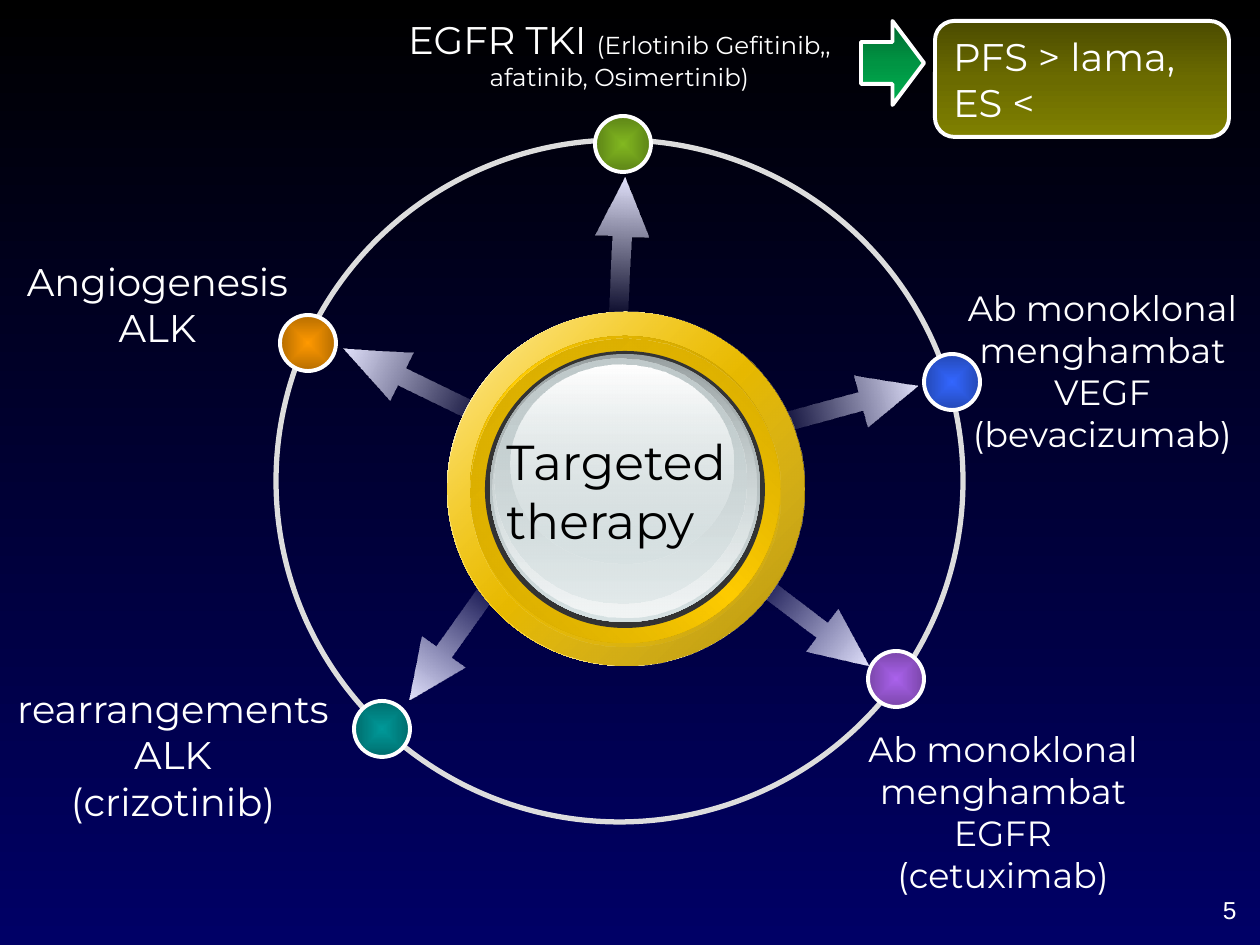
from lxml import etree
from pptx import Presentation
from pptx import util as u
from pptx.dml.color import RGBColor
from pptx.enum import shapes, text
from pptx.oxml.ns import qn

SCALE = u.Inches(1) / 126
WIDTH, HEIGHT = 1260, 945
NODE_SIZE = 56

BLACK = RGBColor(0x00, 0x00, 0x00)
WHITE = RGBColor(0xFF, 0xFF, 0xFF)
NAVY = RGBColor(0x00, 0x00, 0x66)
RING_GRAY = RGBColor(0xDD, 0xDD, 0xDD)
CHARCOAL = RGBColor(0x33, 0x33, 0x33)
LAVENDER = RGBColor(0xDA, 0xDA, 0xF2)
PALE_LAVENDER = RGBColor(0xE5, 0xE5, 0xFF)
GOLD = RGBColor(0xFF, 0xCC, 0x00)
DARK_GOLD = RGBColor(0xB6, 0x92, 0x00)
MID_GOLD = RGBColor(0xC3, 0x9C, 0x00)
WARM_GOLD = RGBColor(0xD1, 0xA7, 0x00)
STEEL = RGBColor(0x99, 0xA1, 0xA2)
SILVER = RGBColor(0xC1, 0xCB, 0xCC)
ICE = RGBColor(0xD6, 0xE1, 0xE2)
FROST = RGBColor(0xF2, 0xF5, 0xF5)
LIME = RGBColor(0x82, 0xB8, 0x20)
DARK_LIME = RGBColor(0x5D, 0x84, 0x17)
BLUE = RGBColor(0x33, 0x66, 0xFF)
DARK_BLUE = RGBColor(0x24, 0x49, 0xB6)
PURPLE = RGBColor(0xAA, 0x62, 0xEC)
DARK_PURPLE = RGBColor(0x7A, 0x46, 0xA9)
TEAL = RGBColor(0x00, 0x99, 0x99)
DARK_TEAL = RGBColor(0x00, 0x6D, 0x6D)
ORANGE = RGBColor(0xFF, 0x99, 0x00)
DARK_ORANGE = RGBColor(0xB6, 0x6D, 0x00)
GREENS = [RGBColor(0x00, 0x68, 0x2F), RGBColor(0x00, 0x94, 0x43), RGBColor(0x00, 0xB0, 0x50)]
OLIVES = [RGBColor(0x4C, 0x4C, 0x00), RGBColor(0x6B, 0x6B, 0x00), RGBColor(0x7F, 0x80, 0x00)]

OVAL = shapes.MSO_SHAPE.OVAL
RIGHT_ARROW = shapes.MSO_SHAPE.RIGHT_ARROW
ROUNDED = shapes.MSO_SHAPE.ROUNDED_RECTANGLE
LEFT, CENTER, RIGHT = text.PP_ALIGN.LEFT, text.PP_ALIGN.CENTER, text.PP_ALIGN.RIGHT


def px(*values):
    return [round(value * SCALE) for value in values]


def apply_gradient(fill, owner, stops, angle=None):
    """Stops are colours or (colour, opacity %), evenly spread; no angle means from the centre."""
    fill.gradient()
    gradient = owner.find(".//" + qn("a:gradFill"))
    for child in list(gradient):
        gradient.remove(child)
    stop_list = etree.SubElement(gradient, qn("a:gsLst"))
    for index, stop in enumerate(stops):
        color, opacity = stop if isinstance(stop[0], RGBColor) else (stop, 100)
        position = str(100000 * index // (len(stops) - 1))
        mark = etree.SubElement(stop_list, qn("a:gs"), pos=position)
        tint = etree.SubElement(mark, qn("a:srgbClr"), val=str(color))
        if opacity < 100:
            etree.SubElement(tint, qn("a:alpha"), val=str(opacity * 1000))
    if angle is None:
        centred = etree.SubElement(gradient, qn("a:path"), {"path": "shape"})
        etree.SubElement(centred, qn("a:fillToRect"), dict.fromkeys("ltrb", "50000"))
    else:
        etree.SubElement(gradient, qn("a:lin"), ang=str(angle * 60000), scaled="0")


class SlideBuilder:
    font = "Montserrat"
    outline_width = 2.25

    def __init__(self, slide):
        self.slide = slide

    def background(self, stops, angle):
        apply_gradient(self.slide.background.fill, self.slide.element, stops, angle)

    def shape(self, kind, box, stops=None, angle=None, line=None, width=outline_width):
        """Stops: None for no fill, one colour for a solid fill, more for a gradient."""
        shape = self.slide.shapes.add_shape(kind, *px(*box))
        shape.shadow.inherit = False
        if not stops:
            shape.fill.background()
        elif len(stops) == 1:
            shape.fill.solid()
            shape.fill.fore_color.rgb = stops[0]
        else:
            apply_gradient(shape.fill, shape.element, stops, angle)
        if line is None:
            shape.line.fill.background()
        else:
            shape.line.color.rgb = line
            shape.line.width = u.Pt(width)
        return shape

    def spoke(self, box, rotation, head):
        arrow = self.shape(RIGHT_ARROW, box, [(LAVENDER, 0), PALE_LAVENDER], 0)
        arrow.rotation = rotation
        arrow.adjustments[0], arrow.adjustments[1] = 0.352, head

    def node(self, left, top, inner, outer):
        self.shape(OVAL, (left, top, NODE_SIZE, NODE_SIZE), [inner, outer], line=WHITE)

    def set_text(self, shape, paragraphs, align=CENTER, color=WHITE, font=font,
                 anchor=text.MSO_ANCHOR.TOP, wrap=True):
        """Each paragraph is a list of (wording, point size) runs."""
        frame = shape.text_frame
        frame.word_wrap = wrap
        frame.vertical_anchor = anchor
        for index, runs in enumerate(paragraphs):
            paragraph = frame.add_paragraph() if index else frame.paragraphs[0]
            paragraph.alignment = align
            for wording, size in runs:
                run = paragraph.add_run()
                run.text = wording
                run.font.color.rgb = color
                for name, value in {"name": font, "size": u.Pt(size)}.items():
                    setattr(run.font, name, value)

    def label(self, box, paragraphs, **style):
        self.set_text(self.slide.shapes.add_textbox(*px(*box)), paragraphs, **style)


def main():
    presentation = Presentation()
    presentation.slide_width, presentation.slide_height = px(WIDTH, HEIGHT)
    builder = SlideBuilder(presentation.slides.add_slide(presentation.slide_layouts[6]))
    builder.background([BLACK, NAVY], 90)
    middle = text.MSO_ANCHOR.MIDDLE
    builder.label((1113, 885, 136, 50), [[("5", 14)]], align=RIGHT, font="Arial",
                  anchor=middle, wrap=False)

    for box, rotation, head in [
        ((549, 223, 144, 53), 272.8, 1.11),
        ((738, 595, 145, 53), 37.2, 1.11),
        ((379, 614, 144, 53), 125.6, 1.11),
        ((775, 378, 145, 53), 344.9, 1.11),
        ((336, 357, 159, 53), 205.9, 1.21),
    ]:
        builder.spoke(box, rotation, head)

    builder.shape(OVAL, (276, 140, 687, 682), line=RING_GRAY, width=3)
    for box, stops, angle in [
        ((447, 312, 357, 354), [WHITE, GOLD, WHITE], 45),
        ((447, 312, 357, 354), [(GOLD, 32), DARK_GOLD], 45),
        ((470, 336, 310, 307), [MID_GOLD, GOLD, MID_GOLD], 315),
        ((470, 339, 310, 307), [WARM_GOLD, (GOLD, 0)], 45),
        ((485, 351, 280, 277), [CHARCOAL], None),
        ((490, 354, 270, 268), [STEEL, ICE], 90),
        ((493, 357, 263, 261), [(ICE, 0), FROST], 90),
        ((495, 359, 251, 244), [SILVER, (ICE, 48)], 90),
        ((510, 365, 223, 199), [WHITE, (ICE, 38)], 90),
    ]:
        builder.shape(OVAL, box, stops, angle)
    builder.label((494, 425, 284, 131), [[("Targeted therapy", 28)]], align=LEFT, color=BLACK)

    for box, paragraphs in [
        ((945, 280, 315, 183), [[("Ab monoklonal menghambat VEGF", 20)], [("(bevacizumab)", 20)]]),
        ((819, 721, 368, 183), [[("Ab monoklonal menghambat EGFR", 20)], [("(cetuximab)", 20)]]),
        ((378, 10, 483, 89),
         [[("EGFR TKI ", 22), ("(Erlotinib Gefitinib,, afatinib, Osimertinib)", 14)]]),
        ((-21, 679, 388, 152), [[("rearrangements ALK", 22)], [("(crizotinib)", 22)]]),
        ((0, 252, 315, 106), [[("Angiogenesis ALK", 22)]]),
    ]:
        builder.label(box, paragraphs)

    for left, top, inner, outer in [
        (595, 116, LIME, DARK_LIME),
        (924, 354, BLUE, DARK_BLUE),
        (868, 651, PURPLE, DARK_PURPLE),
        (354, 701, TEAL, DARK_TEAL),
        (280, 315, ORANGE, DARK_ORANGE),
    ]:
        builder.node(left, top, inner, outer)

    builder.shape(RIGHT_ARROW, (861, 21, 63, 84), GREENS, 90, line=WHITE)
    outcome = builder.shape(ROUNDED, (935, 21, 294, 116), OLIVES, 90, line=WHITE)
    builder.set_text(outcome, [[("PFS > lama, ES <", 22)]], align=LEFT, anchor=middle)
    presentation.save("out.pptx")


if __name__ == "__main__":
    main()
